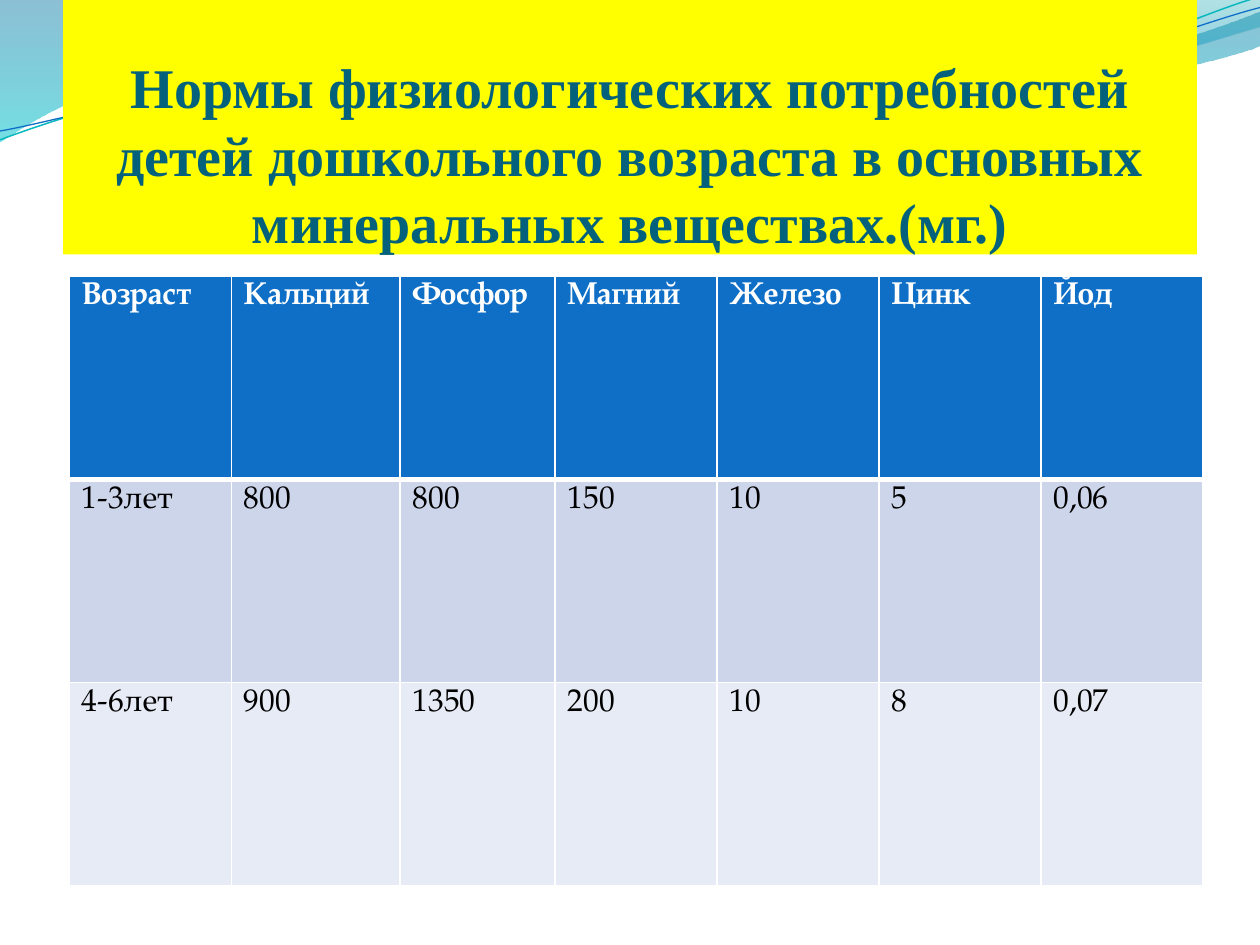
from lxml import etree
from pptx import Presentation
from pptx.dml.color import RGBColor
from pptx.enum.text import MSO_ANCHOR, PP_ALIGN
from pptx.oxml.ns import qn
from pptx.util import Inches, Pt

BOTTOM, TOP = MSO_ANCHOR.BOTTOM, MSO_ANCHOR.TOP
CENTER = PP_ALIGN.CENTER
WHITE = RGBColor(0xFF, 0xFF, 0xFF)
BLACK = RGBColor(0x00, 0x00, 0x00)
YELLOW = RGBColor(0xFF, 0xFF, 0x00)
TEAL = RGBColor(0x04, 0x61, 0x7B)
BLUE = RGBColor(0x0F, 0x6F, 0xC6)
AQUA = RGBColor(0x0A, 0xB8, 0xBF)
DEEP = RGBColor(0x00, 0x74, 0xA1)
CYAN = RGBColor(0x00, 0xC6, 0xCF)
SEA = RGBColor(0x00, 0xA1, 0xA9)
SKY = RGBColor(0x00, 0x8B, 0xBF)
PALE = RGBColor(0xCC, 0xD5, 0xEA)
MIST = RGBColor(0xE7, 0xEB, 0xF5)

deck = Presentation()
deck.slide_width, deck.slide_height = Inches(10), Inches(7.5)
W = deck.slide_width
slide = deck.slides.add_slide(deck.slide_layouts[5])
shapes = slide.shapes


def add_wave(path, closed):
    """Draw a path of points (2 numbers) and Bezier curves (6 numbers), in inches."""
    ends = [(Inches(part[-2]), Inches(part[-1])) for part in path]
    pen = shapes.build_freeform(*ends[0])
    pen.add_line_segments(ends[1:], close=closed)
    wave = pen.convert_to_shape()
    wave.shadow.inherit = False
    # Turn the straight steps into curves where the path has control points
    steps = list(wave.element.spPr.iter(qn("a:lnTo")))
    for step, part in zip(steps, path[1:]):
        if len(part) == 6:
            curve = etree.Element(qn("a:cubicBezTo"))
            for x, y in zip(part[::2], part[1::2]):
                etree.SubElement(curve, qn("a:pt"), x=str(Inches(x) - wave.left),
                                 y=str(Inches(y) - wave.top))
            step.getparent().replace(step, curve)
    return wave


# Shaded waves: path, then (place, colour, opacity) for each stop
bands = [
    ([(0, 0), (4.4, -0.01), (4.76, 0.17, 6.64, 0.63, 7.58, 0.63),
      (8.53, 0.63, 9.58, 0.26, 10, 0.09), (10.01, 0.36),
      (9.83, 0.44, 8.7, 0.76, 7.46, 0.75), (6.22, 0.75, 3.82, 0.28, 2.57, 0.34),
      (1.29, 0.36, 0.46, 0.83, -0.01, 1.13)],
     [(0, DEEP, 45), (1, CYAN, 55)]),
    ([(4.79, -0.01), (5.09, 0.11, 6.82, 0.62, 7.69, 0.65),
      (8.56, 0.69, 9.61, 0.32, 10, 0.21), (10, 0)],
     [(0, SEA, 30), (0.8, SKY, 45)]),
]
for path, stops in bands:
    wave = add_wave(path, True)
    wave.line.fill.background()
    wave.fill.gradient()
    wave.fill.gradient_angle = 270
    for stop, (place, color, alpha) in zip(wave.fill.gradient_stops, stops):
        stop.position = place
        stop.color.rgb = color
    tints = wave.element.spPr.iter(qn("a:srgbClr"))
    for tint, (place, color, alpha) in zip(tints, stops):
        etree.SubElement(tint, qn("a:alpha"), val=str(alpha * 1000))

# Thin waves
threads = [
    ([(0, 1.11), (0.48, 0.93, 1.58, 0.57, 2.77, 0.52),
      (3.95, 0.47, 5.93, 0.89, 7.13, 0.8), (8.33, 0.71, 9.38, 0.15, 9.98, -0.02)],
     AQUA, 0.85),
    ([(0, 1.04), (0.47, 0.96, 1.64, 0.61, 2.83, 0.56),
      (4.03, 0.51, 5.97, 0.84, 7.17, 0.75), (8.36, 0.67, 9.41, 0.21, 10, 0.06)],
     BLUE, 0.75),
]
for path, color, width in threads:
    wave = add_wave(path, False)
    wave.fill.background()
    wave.line.color.rgb = color
    wave.line.width = Pt(width)

# Title, in front of the waves
title = shapes.title
shapes.element.append(title.element)
title.left, title.top = int(W * 0.05), 0
title.width, title.height = int(W * 0.9), Inches(2.02)
title.fill.solid()
title.fill.fore_color.rgb = YELLOW
frame = title.text_frame
look = {"word_wrap": True, "vertical_anchor": BOTTOM, "margin_left": 0,
        "margin_right": 0, "margin_top": Inches(0.05), "margin_bottom": 0}
for key, value in look.items():
    setattr(frame, key, value)
frame.text = ("Нормы физиологических потребностей детей дошкольного "
              "возраста в основных минеральных веществах.(мг.)")
line = frame.paragraphs[0]
line.alignment = CENTER
for key, value in {"name": "Times New Roman", "size": Pt(32), "bold": True}.items():
    setattr(line.font, key, value)
line.font.color.rgb = TEAL

# Table of daily needs
rows = [
    ["Возраст", "Кальций", "Фосфор", "Магний", "Железо", "Цинк", "Йод"],
    ["1-3лет", "800", "800", "150", "10", "5", "0,06"],
    ["4-6лет", "900", "1350", "200", "10", "8", "0,07"],
]
even = 9 / 7
widths = [even, 1.34, 1.23] + [even] * 4
styles = [(BLUE, WHITE, True), (PALE, BLACK, False), (MIST, BLACK, False)]
table = shapes.add_table(len(rows), len(widths), Inches(0.55), Inches(2.19),
                         Inches(9), Inches(4.84)).table
for column, width in zip(table.columns, widths):
    column.width = Inches(width)
for r, (row, (fill, ink, bold)) in enumerate(zip(rows, styles)):
    for c, text in enumerate(row):
        cell = table.cell(r, c)
        cell.text = text
        cell.vertical_anchor = TOP
        cell.fill.solid()
        cell.fill.fore_color.rgb = fill
        font = cell.text_frame.paragraphs[0].runs[0].font
        for key, value in {"name": "TeX Gyre Pagella", "size": Pt(18), "bold": bold}.items():
            setattr(font, key, value)
        font.color.rgb = ink
        thick = {"lnB": 3} if r == 0 else {"lnT": 3} if r == 1 else {}
        props = cell._tc.get_or_add_tcPr()
        for spot, side in enumerate(["lnL", "lnR", "lnT", "lnB"]):
            edge = etree.Element(qn("a:" + side), w=str(Pt(thick.get(side, 1))))
            paint = etree.SubElement(edge, qn("a:solidFill"))
            etree.SubElement(paint, qn("a:srgbClr"), val=str(WHITE))
            props.insert(spot, edge)

deck.save("out.pptx")
